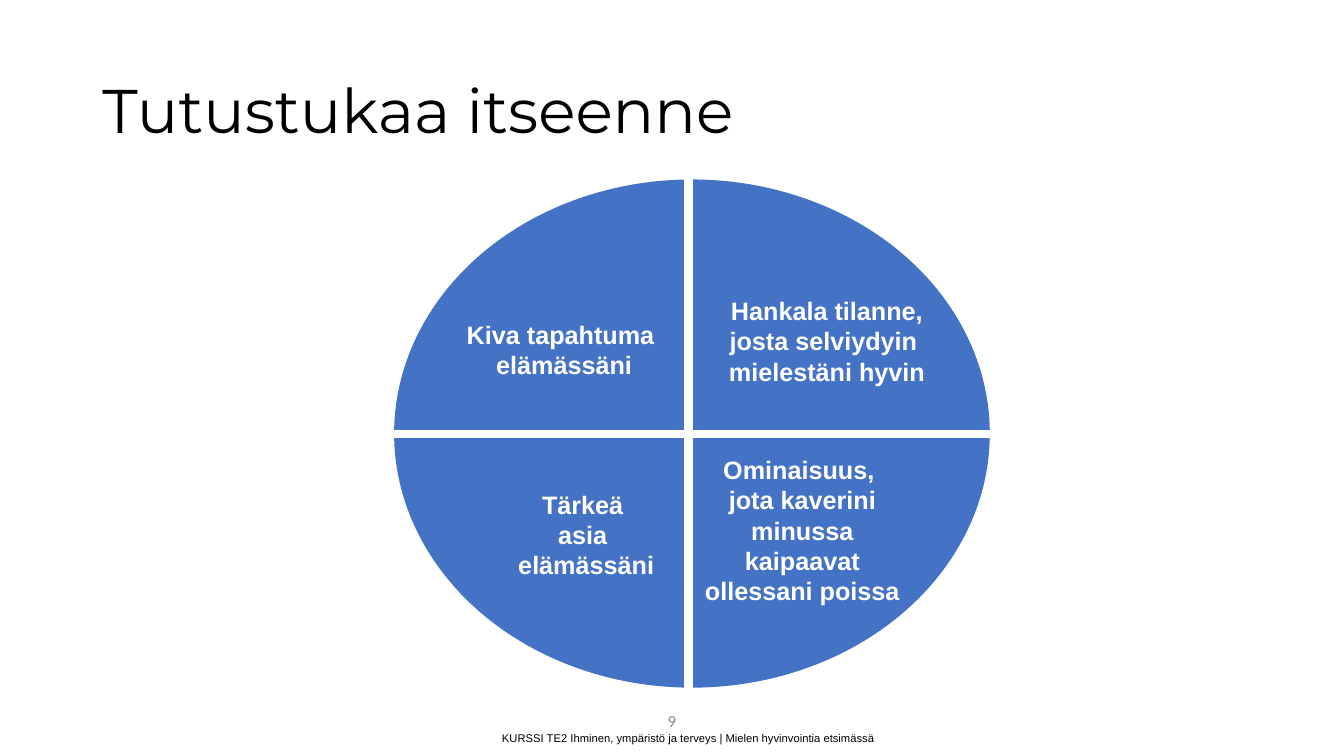
from pptx import Presentation
from pptx.dml.color import RGBColor
from pptx.enum import shapes, text
from pptx.oxml import ns, xmlchemy
from pptx.util import Pt

BLACK = RGBColor(0x00, 0x00, 0x00)
WHITE = RGBColor(0xFF, 0xFF, 0xFF)
GREY = RGBColor(0x89, 0x89, 0x89)
BLUE = RGBColor(0x44, 0x72, 0xC4)


class SlideBuilder:
    """Holds the style and the current slide; lengths are in points."""

    title_font, body_font, number_font = "Montserrat", "Arial", "Calibri"
    divider_width = 6

    def __init__(self, slide):
        self.slide = slide

    def style(self, paragraph, font, size, color, bold=False):
        paragraph.font.name = font
        paragraph.font.size = Pt(size)
        paragraph.font.color.rgb = color
        paragraph.font.bold = bold

    def title(self, wording, left, top, width, height):
        heading = self.slide.shapes.title
        heading.left, heading.top = Pt(left), Pt(top)
        heading.width, heading.height = Pt(width), Pt(height)
        frame = heading.text_frame
        frame.text = wording
        frame.vertical_anchor = text.MSO_ANCHOR.MIDDLE
        paragraph = frame.paragraphs[0]
        paragraph.alignment = text.PP_ALIGN.LEFT
        paragraph.line_spacing = 0.9
        self.style(paragraph, self.title_font, 44, BLACK)

    def ellipse(self, left, top, width, height, color):
        oval = self.slide.shapes.add_shape(
            shapes.MSO_SHAPE.OVAL, Pt(left), Pt(top), Pt(width), Pt(height))
        oval.shadow.inherit = False
        oval.fill.solid()
        oval.fill.fore_color.rgb = color
        oval.line.fill.background()

    def divider(self, x1, y1, x2, y2):
        line = self.slide.shapes.add_connector(
            shapes.MSO_CONNECTOR.STRAIGHT, Pt(x1), Pt(y1), Pt(x2), Pt(y2))
        line.line.color.rgb = WHITE
        line.line.width = Pt(self.divider_width)
        line._element.spPr.append(xmlchemy.OxmlElement("a:effectLst"))

    def centred_text(self, lines, left, top, width, height, wrap=True):
        box = self.slide.shapes.add_textbox(
            Pt(left), Pt(top), Pt(width), Pt(height))
        frame = box.text_frame
        frame.text = "\n".join(lines)
        frame.word_wrap = wrap
        for paragraph in frame.paragraphs:
            paragraph.alignment = text.PP_ALIGN.CENTER
        return frame

    def quarter_label(self, lines, left, top, width, height, wrap=False):
        frame = self.centred_text(lines, left, top, width, height, wrap)
        frame.auto_size = text.MSO_AUTO_SIZE.SHAPE_TO_FIT_TEXT
        for paragraph in frame.paragraphs:
            self.style(paragraph, self.body_font, 18, WHITE, bold=True)

    def footer_text(self, wording, left, top, font, size, color):
        frame = self.centred_text([wording], left, top, 324, 28.75)
        frame.vertical_anchor = text.MSO_ANCHOR.MIDDLE
        self.style(frame.paragraphs[0], font, size, color)


def main():
    deck = Presentation()
    deck.slide_width, deck.slide_height = Pt(960), Pt(540)
    page = SlideBuilder(deck.slides.add_slide(deck.slide_layouts[5]))

    page.title("Tutustukaa itseenne", 66, 28.75, 828, 104.4)

    # Page number
    page.footer_text("9", 318, 500.5, page.number_font, 12, GREY)

    # Circle split into four quarters
    page.ellipse(281.5, 128.2, 425.5, 363, BLUE)
    page.divider(259, 309.8, 723.5, 309.8)

    # Quarter labels
    page.quarter_label(["Kiva tapahtuma ", "elämässäni"],
                       326.2, 224.6, 153.4, 50.9)
    page.quarter_label(["Hankala tilanne, ", "josta selviydyin ",
                        "mielestäni hyvin"], 512.6, 207.4, 156.2, 72.7)
    page.quarter_label(["Tärkeä ", "asia ", "elämässäni"],
                       362.9, 345.6, 111.6, 72.7)
    page.quarter_label(["Ominaisuus, ", "jota kaverini minussa", "kaipaavat",
                        "ollessani poissa"], 491, 321.1, 164.2, 115, wrap=True)

    page.divider(491.8, 105.8, 491.8, 508.3)

    # Course footer
    page.footer_text(
        "KURSSI TE2 Ihminen, ympäristö ja terveys | Mielen hyvinvointia etsimässä",
        329.8, 512.6, page.body_font, 8, BLACK)

    deck.save("out.pptx")


if __name__ == "__main__":
    main()
